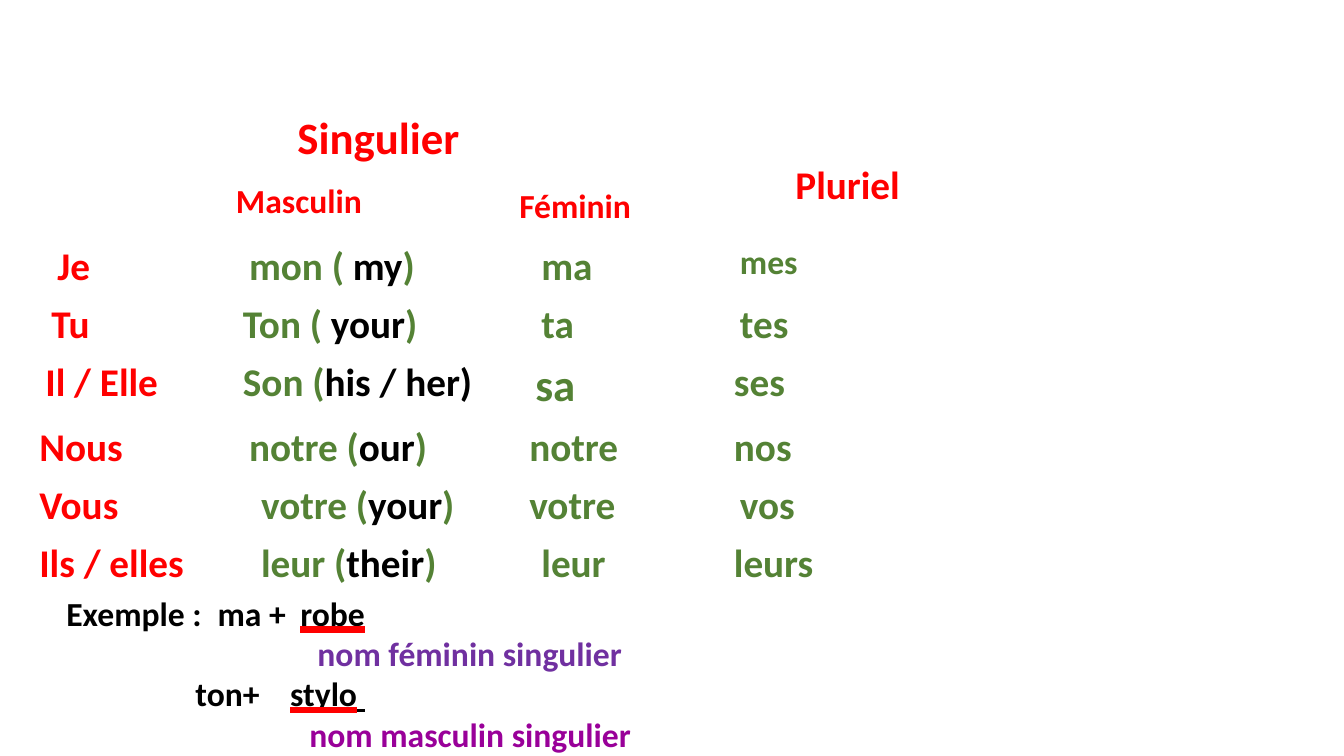
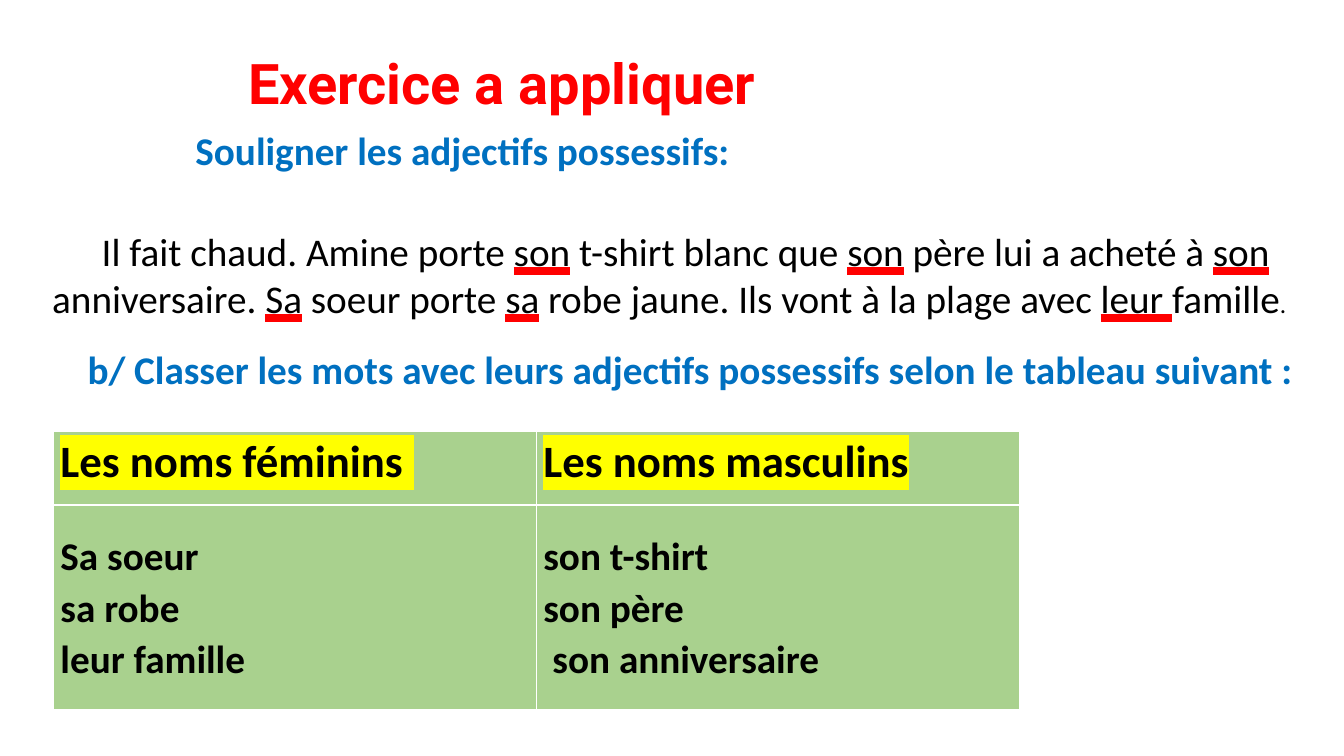
from lxml.etree import SubElement
from pptx import Presentation
from pptx.dml.color import RGBColor
from pptx.enum.text import MSO_ANCHOR, MSO_AUTO_SIZE, MSO_UNDERLINE, PP_ALIGN
from pptx.oxml.ns import qn
from pptx.util import Inches, Pt

COLORS = {"red": "FF0000", "green": "548235", "black": "000000", "blue": "0070C0",
          "purple": "7030A0", "plum": "990099", "yellow": "FFFF00", "leaf": "A9D18E"}
BASE = {"name": "Calibri", "size": 28, "bold": True, "color": "black"}
INDENT_STEP = 0.06

# Slide 1 content: each word is (indent steps, runs, size)
RED, GREEN = {"color": "red"}, {"color": "green"}
MARKED = {"underline": MSO_UNDERLINE.HEAVY_LINE, "line": "red"}
POSSESSIVES = [
    ((3, "Je"), (1, "mon ( ", "my", ")"), (3, "ma"), (3, "mes")),
    ((2, "Tu"), (0, "Ton ( ", "your", ")"), (3, "ta"), (3, "tes")),
    ((1, "Il / Elle"), (0, "Son (", "his / her)", ""), (2, "sa"), (2, "ses")),
    ((0, "Nous"), (1, "notre (", "our", ")"), (1, "notre"), (2, "nos")),
    ((0, "Vous"), (3, "votre (", "your", ")"), (1, "votre"), (3, "vos")),
    ((0, "Ils / elles"), (3, "leur (", "their", ")"), (3, "leur"), (2, "leurs")),
]
WORD_SIZES = {"mes": 24, "sa": 32}
GRID_COLUMNS = [2.02, 2.78, 1.97, 4.15]
# Headings: left, top, column widths, height, cells of (text, size, left inset, top inset)
HEADINGS = [
    (2.24, 1.06, [4.76], 0.66, [("Singulier", 32, 0.71, 0.05)]),
    (7, 1.09, [4.2], 1.27, [("Pluriel", 28, 0.89, 0.52)]),
    (2.24, 1.7, [2.81, 1.95], 0.66,
     [("Masculin", 24, 0.1, 0.1), ("Féminin", 24, 0.1, 0.15)]),
]
# Examples: tab stops, runs
EXAMPLES = [
    ([1.5, 2.32], [("Exemple :\tma +\t", {}), ("robe", MARKED)]),
    ([2.49], [("\tnom féminin singulier", {"color": "purple"})]),
    ([1.28, 2.22], [("\tton+\t", {}), ("stylo", MARKED), (" ", {"underline": True})]),
    ([2.41], [("\tnom masculin singulier", {"color": "plum"})]),
]

# Slide 2 content: odd pieces of the story are underlined
TITLE = "Exercice a appliquer"
TASK_A = "Souligner les adjectifs possessifs:"
STORY = ["Il fait chaud. Amine porte ", "son", " t-shirt blanc que ", "son",
         " père lui a acheté à ", "son", " anniversaire. ", "Sa", " soeur porte ", "sa",
         " robe jaune. Ils vont à la plage avec ", "leur ", "famille"]
TASK_B = "b/ Classer les mots avec leurs adjectifs possessifs selon le tableau suivant :"
NOUNS = [("Les noms féminins ", [(0, "Sa soeur"), (0, "sa robe"), (0, "leur famille")]),
         ("Les noms masculins", [(0, "son t-shirt"), (0, "son père"),
                                 (0.09, "son anniversaire")])]


def add_color(parent, tag, color):
    SubElement(SubElement(parent, qn(tag)) if tag != "a:highlight" else parent,
               qn("a:solidFill" if tag != "a:highlight" else tag)
               ).append(SubElement(parent, qn("a:srgbClr"), val=COLORS[color]))


def write_runs(paragraph, runs, **shared):
    """Add (text, format) runs on top of the base format."""
    for text, changes in runs:
        look = {**BASE, **shared, **changes}
        run = paragraph.add_run()
        run.text = text
        font = run.font
        font.color.rgb = RGBColor.from_string(COLORS[look.pop("color")])
        font.size = Pt(look.pop("size"))
        for key, tag in (("highlight", "a:highlight"), ("line", "a:uFill")):
            if key in look:
                add_color(font._element, tag, look.pop(key))
        for key, value in look.items():
            setattr(font, key, value)


def indent_first(paragraph, inches):
    paragraph._p.get_or_add_pPr().set("indent", str(Inches(inches)))


def set_tabs(paragraph, stops):
    tabs = SubElement(paragraph._p.get_or_add_pPr(), qn("a:tabLst"))
    for stop in stops:
        SubElement(tabs, qn("a:tab"), pos=str(Inches(stop)), algn="l")


def add_text(slide, *box):
    frame = slide.shapes.add_textbox(*map(Inches, box)).text_frame
    frame.word_wrap = True
    return frame


def add_grid(slide, left, top, columns, rows, fill=None):
    grid = slide.shapes.add_table(len(rows), len(columns), Inches(left), Inches(top),
                                  Inches(sum(columns)), Inches(sum(rows))).table
    grid.horz_banding = False
    for column, width in zip(grid.columns, columns):
        column.width = Inches(width)
    for row, height in zip(grid.rows, rows):
        row.height = Inches(height)
    for cell in grid.iter_cells():
        if fill:
            cell.fill.solid()
            cell.fill.fore_color.rgb = RGBColor.from_string(COLORS[fill])
        else:
            cell.fill.background()
    return grid


def build_possessives(deck):
    slide = deck.slides.add_slide(deck.slide_layouts[6])
    # Headings
    for left, top, columns, height, cells in HEADINGS:
        grid = add_grid(slide, left, top, columns, [height])
        for cell, (text, size, inset, drop) in zip(grid.iter_cells(), cells):
            cell.margin_left, cell.margin_top = Inches(inset), Inches(drop)
            write_runs(cell.text_frame.paragraphs[0], [(text, RED)], size=size)
    # Pronouns and their possessives
    grid = add_grid(slide, 0.29, 2.36, GRID_COLUMNS, [0.55] * len(POSSESSIVES))
    for r, words in enumerate(POSSESSIVES):
        for c, (steps, *pieces) in enumerate(words):
            cell = grid.cell(r, c)
            cell.margin_left = Inches(0.1 + steps * INDENT_STEP)
            looks = [GREEN if c else RED, {}, GREEN]
            runs = [run for run in zip(pieces, looks) if run[0]]
            write_runs(cell.text_frame.paragraphs[0], runs,
                       size=WORD_SIZES.get(pieces[0], 28))
    # Examples
    frame = add_text(slide, 0.56, 5.83, 7.31, 1.72)
    for i, (stops, runs) in enumerate(EXAMPLES):
        paragraph = frame.add_paragraph() if i else frame.paragraphs[0]
        set_tabs(paragraph, stops)
        write_runs(paragraph, runs, size=24)


def build_exercise(deck):
    slide = deck.slides.add_slide(deck.slide_layouts[5])
    # Title and first task
    title = slide.shapes.title
    title_box = {"left": 2.36, "top": 0.43, "width": 9.13, "height": 0.77}
    for side, value in title_box.items():
        setattr(title, side, Inches(value))
    frame = title.text_frame
    frame.auto_size, frame.vertical_anchor = MSO_AUTO_SIZE.NONE, MSO_ANCHOR.TOP
    frame.paragraphs[0].alignment = PP_ALIGN.LEFT
    write_runs(frame.paragraphs[0], [(TITLE, RED)], name="Roboto", size=40)
    task = add_text(slide, 1.84, 1.2, 6.97, 0.57).paragraphs[0]
    write_runs(task, [(TASK_A, {"color": "blue"})])
    # Story and second task
    frame = add_text(slide, 0.42, 2.21, 13.06, 1.99)
    story, task = frame.paragraphs[0], frame.add_paragraph()
    indent_first(story, 0.49)
    write_runs(story, [(text, MARKED if i % 2 else {}) for i, text in enumerate(STORY)]
               + [(".", {"size": 18})], bold=False)
    indent_first(task, 0.35)
    task.space_before = Pt(17)
    write_runs(task, [(TASK_B, {"color": "blue"})])
    # Sorted nouns
    grid = add_grid(slide, 0.53, 4.28, [4.79] * 2, [0.73, 2.03], "leaf")
    for cell in grid.iter_cells():
        cell.margin_left = cell.margin_right = Inches(0.07)
        cell.margin_top = cell.margin_bottom = 0
    for c, (heading, nouns) in enumerate(NOUNS):
        head, body = grid.cell(0, c), grid.cell(1, c)
        body.margin_top = Inches(0.25)
        paragraph = head.text_frame.paragraphs[0]
        paragraph.line_spacing = 1.07
        write_runs(paragraph, [(heading, {"highlight": "yellow"})], size=32)
        for i, (indent, noun) in enumerate(nouns):
            frame = body.text_frame
            paragraph = frame.add_paragraph() if i else frame.paragraphs[0]
            paragraph.line_spacing = 1.07
            indent_first(paragraph, indent)
            write_runs(paragraph, [(noun, {})])


def main():
    deck = Presentation()
    deck.slide_width, deck.slide_height = Inches(13.33), Inches(7.5)
    build_possessives(deck)
    build_exercise(deck)
    deck.save("out.pptx")


if __name__ == "__main__":
    main()
